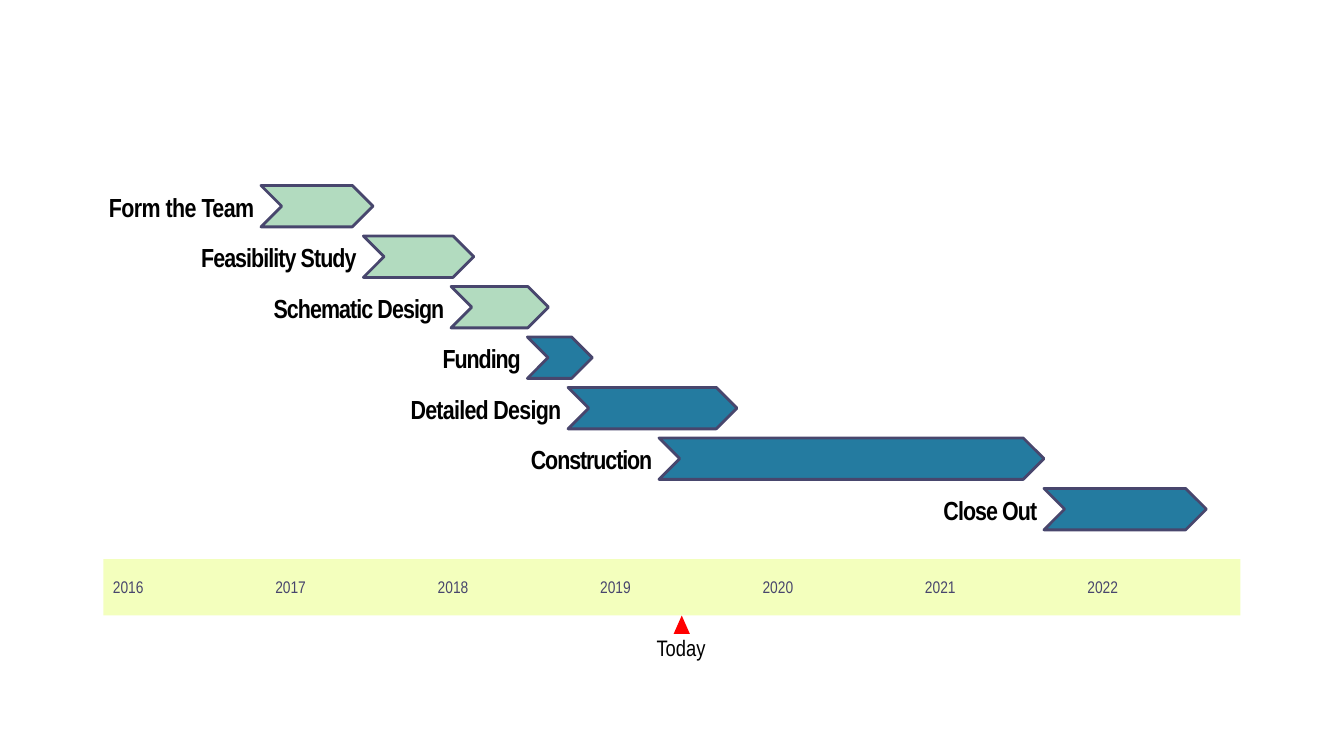
from pptx import Presentation
from pptx.dml.color import RGBColor
from pptx.enum.shapes import MSO_SHAPE
from pptx.enum.text import MSO_ANCHOR, PP_ALIGN
from pptx.util import Inches, Pt

FONT = "Arial Narrow"
BLACK = RGBColor(0x00, 0x00, 0x00)
INDIGO = RGBColor(0x48, 0x46, 0x6D)
DONE = RGBColor(0xB2, 0xDB, 0xBF)
PLANNED = RGBColor(0x24, 0x7B, 0xA0)
BAND = RGBColor(0xF3, 0xFF, 0xBD)
RED = RGBColor(0xFF, 0x00, 0x00)

FIRST_YEAR = 2016
YEARS = 7
TODAY = 2019.56

PHASES = [
    ("Form the Team", 2016.97, 2017.66, DONE, 1.13, -30),
    ("Feasibility Study", 2017.6, 2018.28, DONE, 1.2, -50),
    ("Schematic Design", 2018.14, 2018.74, DONE, 1.32, -50),
    ("Funding", 2018.61, 2019.01, PLANNED, 0.62, -60),
    ("Detailed Design", 2018.86, 2019.9, PLANNED, 1.17, -40),
    ("Construction", 2019.42, 2021.79, PLANNED, 0.94, -60),
    ("Close Out", 2021.79, 2022.79, PLANNED, 0.75, -50),
]


def year_x(year, left, width):
    return left + (year - FIRST_YEAR) * width / YEARS


def add_filled(slide, preset, box, color, outline=None):
    filled = slide.shapes.add_shape(preset, *map(Inches, box))
    filled.shadow.inherit = False
    filled.fill.solid()
    filled.fill.fore_color.rgb = color
    if outline is None:
        filled.line.fill.background()
    else:
        filled.line.color.rgb = outline
        filled.line.width = Pt(1.5)


def add_label(slide, words, box, size, color, align, bold=False, spacing=0, wrap=False):
    frame = slide.shapes.add_textbox(*map(Inches, box)).text_frame
    frame_format = {
        "margin_left": 0, "margin_right": 0, "margin_top": 0, "margin_bottom": 0,
        "word_wrap": wrap, "vertical_anchor": MSO_ANCHOR.MIDDLE,
    }
    for attribute, value in frame_format.items():
        setattr(frame, attribute, value)
    paragraph = frame.paragraphs[0]
    paragraph.alignment = align
    run = paragraph.add_run()
    run.text = words
    for attribute, value in {"name": FONT, "size": Pt(size), "bold": bold}.items():
        setattr(run.font, attribute, value)
    run.font.color.rgb = color
    if spacing:
        run.font._element.set("spc", str(spacing))


def add_year_band(slide, left, top, width, height):
    add_filled(slide, MSO_SHAPE.RECTANGLE, (left, top, width, height), BAND)
    for year in range(FIRST_YEAR, FIRST_YEAR + YEARS):
        label_box = (year_x(year, left, width) + 0.07, top + height / 3, 0.23, height / 3)
        add_label(slide, str(year), label_box, 9, INDIGO, PP_ALIGN.LEFT)


def add_today_marker(slide, left, top, width, height):
    center = year_x(TODAY, left, width)
    pointer = 0.4 * height
    add_filled(slide, MSO_SHAPE.ISOSCELES_TRIANGLE,
               (center - 0.06, top, 0.12, pointer), RED)
    add_label(slide, "Today", (center - 0.19, top + pointer, 0.37, height - pointer),
              12, BLACK, PP_ALIGN.CENTER)


def add_phases(slide, left, top, width, height):
    row = height / len(PHASES)
    bar = row * 0.82
    for index, (phase, start, end, color, label_width, spacing) in enumerate(PHASES):
        row_top = top + index * row
        start_x, end_x = (year_x(year, left, width) for year in (start, end))
        add_filled(slide, MSO_SHAPE.CHEVRON,
                   (start_x, row_top, end_x - start_x, bar), color, INDIGO)
        label_box = (start_x - 0.05 - label_width, row_top + 0.04, label_width, 0.24)
        add_label(slide, phase, label_box, 14, BLACK, PP_ALIGN.RIGHT,
                  bold=True, spacing=spacing, wrap=True)


def main():
    deck = Presentation()
    deck.slide_width, deck.slide_height = Inches(10), Inches(10) * 9 // 16
    slide = deck.slides.add_slide(deck.slide_layouts[6])
    left, width = 0.77, 8.46
    add_year_band(slide, left, 4.16, width, 0.42)
    add_today_marker(slide, left, 4.58, width, 0.34)
    add_phases(slide, left, 1.38, width, 2.63)
    deck.save("out.pptx")


if __name__ == "__main__":
    main()
